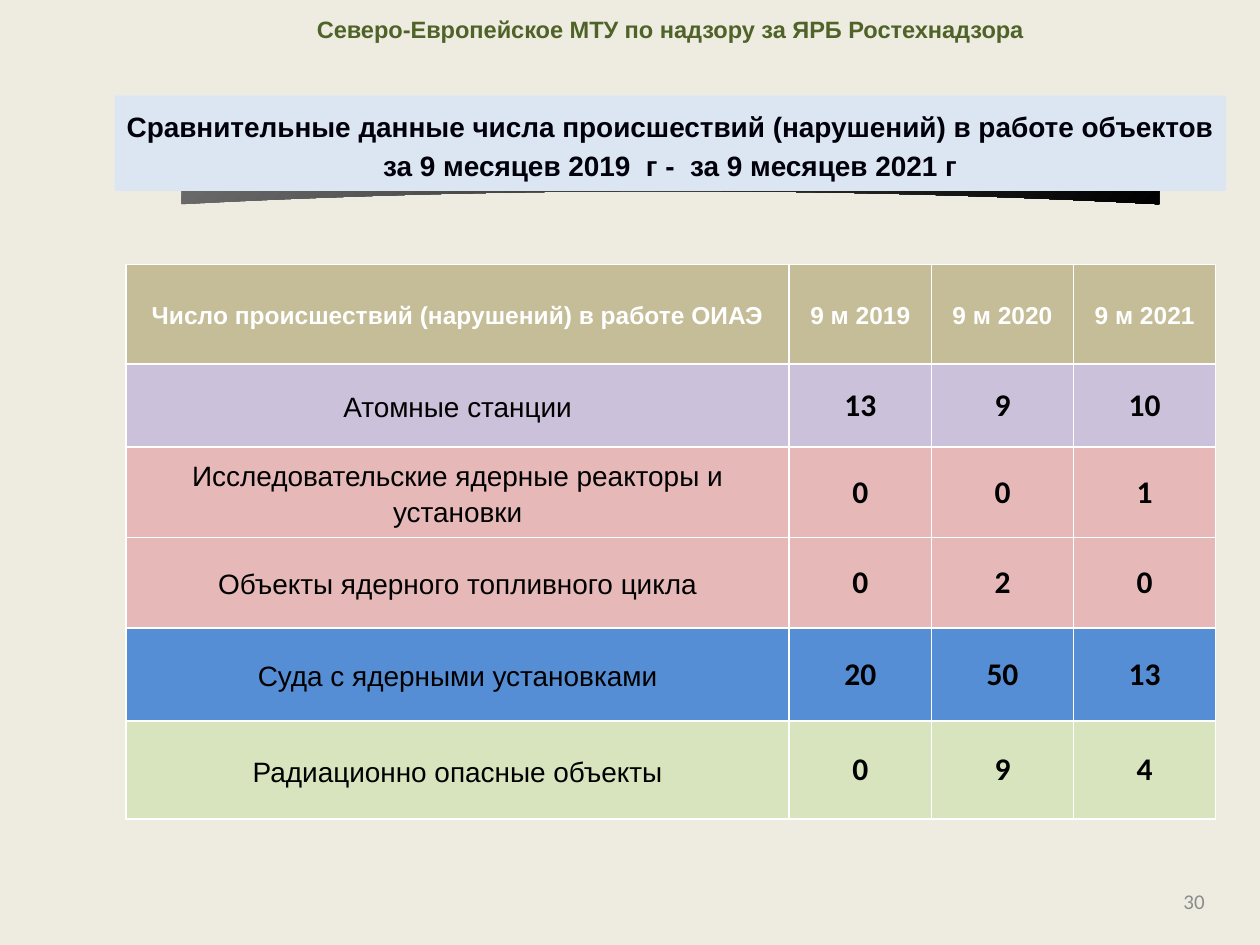
import pptx
import pptx.util
import pptx.dml.color
import pptx.enum.shapes
import pptx.enum.text
import pptx.oxml

WIDTH, HEIGHT = pptx.util.Inches(10), pptx.util.Inches(7.5)

COLORS = {
    "background": "EEECE1",
    "agency": "4F6228",
    "banner": "DCE6F2",
    "banner_text": "00000A",
    "shadow_start": "6C6C6C",
    "shadow_end": "000000",
    "header": "C4BD97",
    "white": "FFFFFF",
    "black": "000000",
    "plants": "CCC1DA",
    "reactors": "E6B9B8",
    "ships": "558ED5",
    "radiation": "D7E4BD",
    "number": "8C8C8C",
}

HEADINGS = ["Число происшествий (нарушений) в работе ОИАЭ", "9 м 2019", "9 м 2020", "9 м 2021"]
INCIDENTS = [
    ("plants", ["Атомные станции"], (13, 9, 10)),
    ("reactors", ["Исследовательские ядерные реакторы и", "установки"], (0, 0, 1)),
    ("reactors", ["Объекты ядерного топливного цикла"], (0, 2, 0)),
    ("ships", ["Суда с ядерными установками"], (20, 50, 13)),
    ("radiation", ["Радиационно опасные объекты"], (0, 9, 4)),
]
COLUMN_WEIGHTS = [5.27, 1.13, 1.13, 1.13]
ROW_WEIGHTS = [0.79, 0.66, 0.72, 0.72, 0.74, 0.78]


def rgb(name):
    return pptx.dml.color.RGBColor.from_string(COLORS[name])


def region(left, top, width, height):
    return int(left * WIDTH), int(top * HEIGHT), int(width * WIDTH), int(height * HEIGHT)


def write(frame, lines, size, color, bold=False, font="Arial", align="CENTER", spacing=None):
    for index, line in enumerate(lines):
        paragraph = frame.add_paragraph() if index else frame.paragraphs[0]
        paragraph.alignment = getattr(pptx.enum.text.PP_ALIGN, align)
        paragraph.line_spacing = spacing
        run = paragraph.add_run()
        run.text = line
        run.font.name = font
        run.font.size = pptx.util.Pt(size)
        run.font.bold = bold
        run.font.color.rgb = rgb(color)


def add_label(slide, box, text, **text_format):
    frame = slide.shapes.add_textbox(*box).text_frame
    frame.word_wrap = True
    frame.vertical_anchor = pptx.enum.text.MSO_ANCHOR.MIDDLE
    write(frame, [text], **text_format)


def add_curved_shadow(slide, box):
    left, top, width, height = box
    steps = 20
    curve = [(1 - i / steps, 0.7 + 0.28 * (1 - 2 * i / steps) ** 2) for i in range(steps + 1)]
    outline = curve + [(0, 0.24), (0.5, 0), (1, 0.24)]
    points = [(left + x * width, top + y * height) for x, y in outline]
    builder = slide.shapes.build_freeform(*points[0])
    builder.add_line_segments(points[1:], close=True)
    shadow = builder.convert_to_shape()
    shadow.shadow.inherit = False
    shadow.line.fill.background()
    shadow.fill.gradient()
    shadow.fill.gradient_angle = 315
    for stop, name, position in zip(shadow.fill.gradient_stops, ("shadow_start", "shadow_end"), (0, 1)):
        stop.color.rgb = rgb(name)
        stop.position = position


def add_banner(slide, box):
    left, top, width, height = box
    add_curved_shadow(slide, (left + 0.06 * width, top + 0.66 * height, 0.88 * width, 0.49 * height))
    banner = slide.shapes.add_shape(pptx.enum.shapes.MSO_SHAPE.RECTANGLE, *box)
    banner.shadow.inherit = False
    banner.fill.solid()
    banner.fill.fore_color.rgb = rgb("banner")
    banner.line.fill.background()
    banner.text_frame.word_wrap = False
    banner.text_frame.vertical_anchor = pptx.enum.text.MSO_ANCHOR.MIDDLE
    titles = [
        "Сравнительные данные числа происшествий (нарушений) в работе объектов",
        "за 9 месяцев 2019  г -  за 9 месяцев 2021 г",
    ]
    write(banner.text_frame, titles, size=16, color="banner_text", bold=True, spacing=1.15)


def fill_cell(cell, background, lines, **text_format):
    cell.fill.solid()
    cell.fill.fore_color.rgb = rgb(background)
    cell.vertical_anchor = pptx.enum.text.MSO_ANCHOR.MIDDLE
    cell.margin_left = cell.margin_right = pptx.util.Inches(0.01)
    cell.margin_top = cell.margin_bottom = 0
    properties = cell._tc.get_or_add_tcPr()
    for index, side in enumerate(("lnL", "lnR", "lnT", "lnB")):
        properties.insert(index, pptx.oxml.parse_xml(
            f'<a:{side} xmlns:a="http://schemas.openxmlformats.org/drawingml/2006/main" w="12700">'
            f'<a:solidFill><a:srgbClr val="{COLORS["white"]}"/></a:solidFill></a:{side}>'))
    write(cell.text_frame, lines, **text_format)


def add_incident_table(slide, box):
    table = slide.shapes.add_table(len(INCIDENTS) + 1, len(HEADINGS), *box).table
    for column, weight in zip(table.columns, COLUMN_WEIGHTS):
        column.width = int(box[2] * weight / sum(COLUMN_WEIGHTS))
    for row, weight in zip(table.rows, ROW_WEIGHTS):
        row.height = int(box[3] * weight / sum(ROW_WEIGHTS))
    for column, heading in enumerate(HEADINGS):
        fill_cell(table.cell(0, column), "header", [heading],
                  size=14, color="white", bold=True, spacing=1.15)
    for row, (background, category, counts) in enumerate(INCIDENTS, 1):
        fill_cell(table.cell(row, 0), background, category, size=16, color="black", spacing=1.15)
        for column, count in enumerate(counts, 1):
            fill_cell(table.cell(row, column), background, [str(count)],
                      size=18, color="black", bold=True, font="Calibri")


def main():
    deck = pptx.Presentation()
    deck.slide_width, deck.slide_height = WIDTH, HEIGHT
    slide = deck.slides.add_slide(deck.slide_layouts[6])
    slide.background.fill.solid()
    slide.background.fill.fore_color.rgb = rgb("background")
    add_label(slide, region(0.032, 0.012, 1, 0.041),
              "Северо-Европейское МТУ по надзору за ЯРБ Ростехнадзора",
              size=13.5, color="agency", bold=True, spacing=0.9)
    add_banner(slide, region(0.091, 0.101, 0.882, 0.101))
    add_incident_table(slide, region(0.1, 0.28, 0.865, 0.587))
    add_label(slide, region(0.733, 0.927, 0.233, 0.053), "30",
              size=12, color="number", font="Calibri", align="RIGHT")
    deck.save("out.pptx")


if __name__ == "__main__":
    main()
